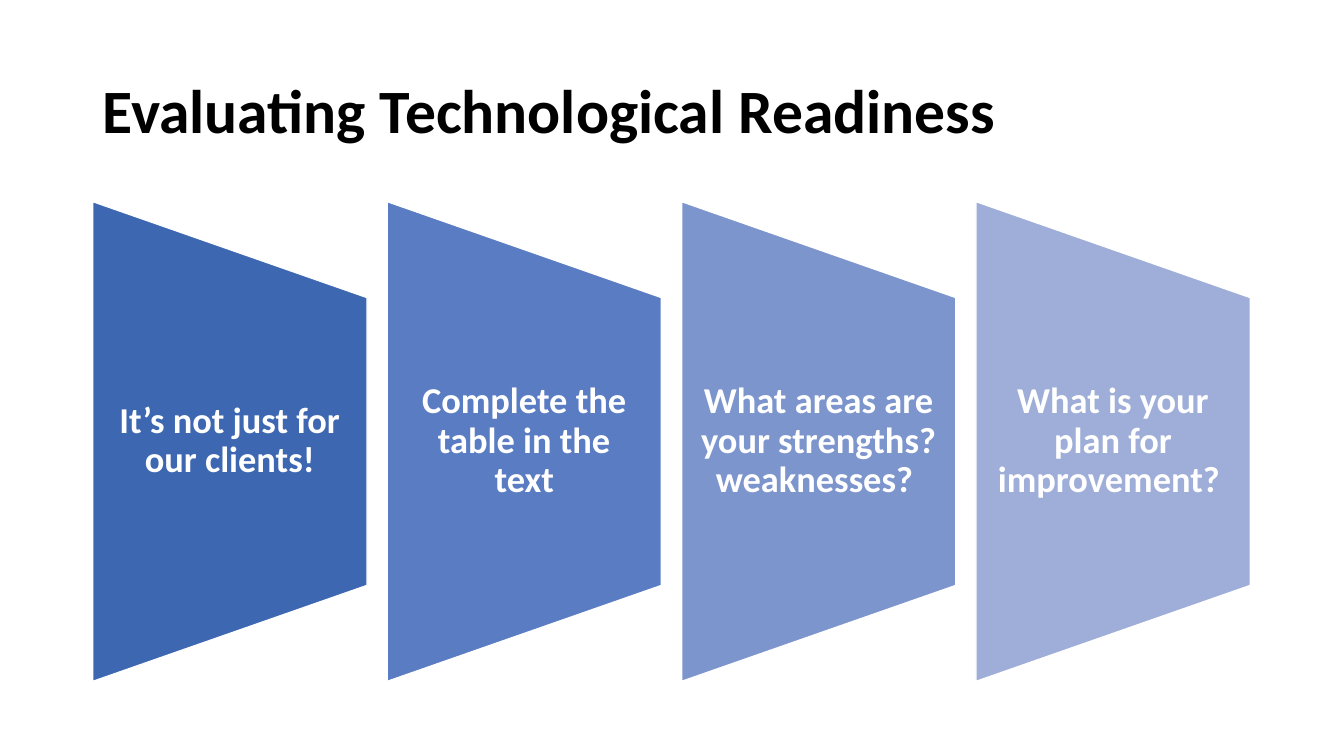
from pptx import Presentation
from pptx.dml.color import RGBColor
from pptx.enum.shapes import MSO_SHAPE
from pptx.enum.text import MSO_ANCHOR, PP_ALIGN
from pptx.util import Inches, Pt

TITLE = "Evaluating Technological Readiness"
STEPS = [
    ("It’s not just for our clients!", "3E67B2"),
    ("Complete the table in the text", "5A7CC3"),
    ("What areas are your strengths? weaknesses? ", "7D95CD"),
    ("What is your plan for improvement? ", "9FAED8"),
]
STEP_PITCH = 2.92
STEP_WIDTH = 2.72


def color(hex_value):
    """Turn a hex string into a colour."""
    return RGBColor.from_string(hex_value)


def add_text(slide, box, text, size, hex_value, alignment, margins):
    """Place bold, vertically centred text in a box."""
    shape = slide.shapes.add_textbox(*map(Inches, box))
    frame = shape.text_frame
    frame.word_wrap = True
    frame.vertical_anchor = MSO_ANCHOR.MIDDLE
    side, edge = margins
    frame.margin_left = frame.margin_right = Inches(side)
    frame.margin_top = frame.margin_bottom = Inches(edge)
    paragraph = frame.paragraphs[0]
    paragraph.alignment = alignment
    paragraph.line_spacing = 0.9
    run = paragraph.add_run()
    run.text = text
    run.font.name = "Calibri"
    run.font.size = Pt(size)
    run.font.bold = True
    run.font.color.rgb = color(hex_value)


def add_step(slide, box, text, fill):
    """Draw one tapering panel with its text centred in the box."""
    left, top, width, height = box
    shift = (height - width) / 2
    panel = slide.shapes.add_shape(
        MSO_SHAPE.FLOWCHART_MANUAL_OPERATION,
        *map(Inches, (left - shift, top + shift, height, width)))
    panel.rotation = 270
    panel.shadow.inherit = False
    panel.fill.solid()
    panel.fill.fore_color.rgb = color(fill)
    panel.line.color.rgb = color("FFFFFF")
    panel.line.width = Pt(1)
    text_box = (left, top + height * 0.2, width, height * 0.6)
    add_text(slide, text_box, text, 26, "FFFFFF", PP_ALIGN.CENTER, (0.18, 0))


def add_steps(slide, box):
    """Lay the panels out from left to right in the box."""
    left, top, height = box
    for index, (text, fill) in enumerate(STEPS):
        step_box = (left + index * STEP_PITCH, top, STEP_WIDTH, height)
        add_step(slide, step_box, text, fill)


def main():
    """Build and save the slide."""
    presentation = Presentation()
    presentation.slide_width = Inches(13.33)
    presentation.slide_height = Inches(7.5)
    slide = presentation.slides.add_slide(presentation.slide_layouts[6])
    add_text(slide, (0.92, 0.4, 11.5, 1.45), TITLE, 44, "000000",
             PP_ALIGN.LEFT, (0.1, 0.05))
    add_steps(slide, (0.92, 2, 4.76))
    presentation.save("out.pptx")


if __name__ == "__main__":
    main()
